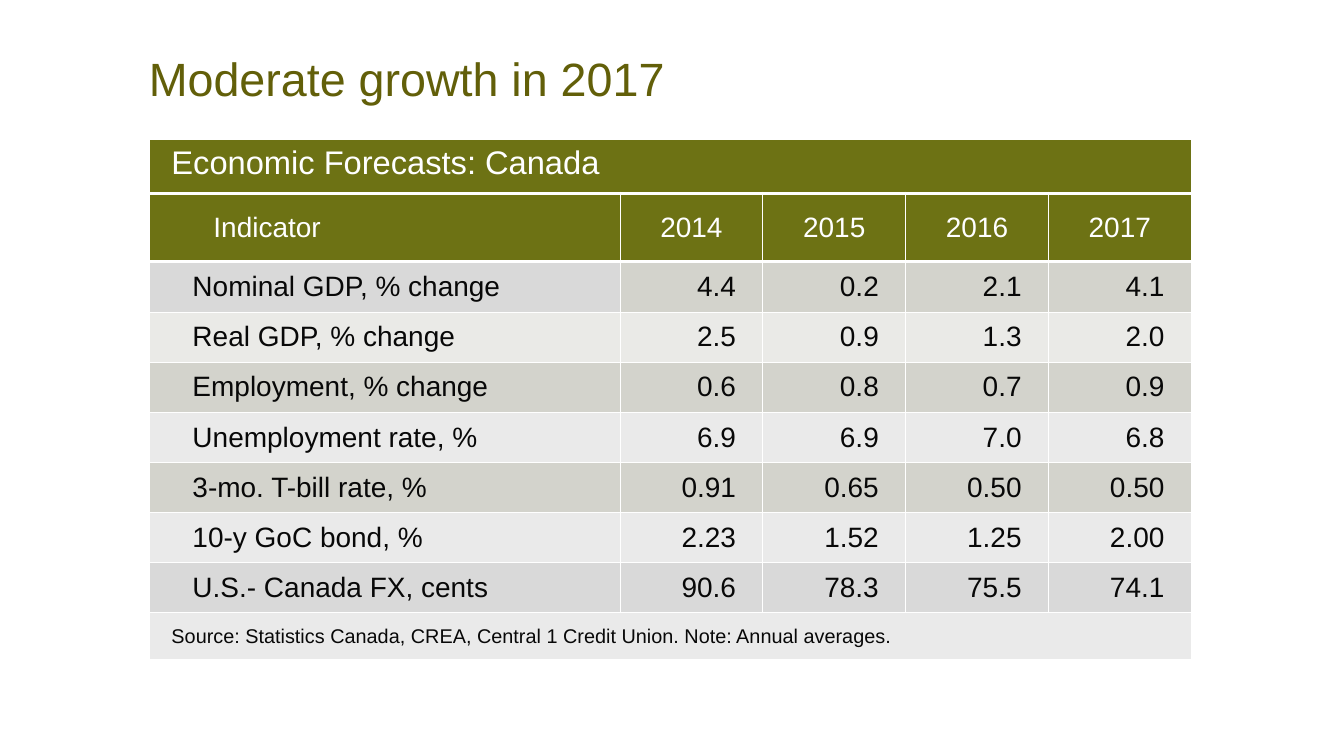
from lxml import etree
from pptx import Presentation
from pptx.dml.color import RGBColor
from pptx.enum import text
from pptx.oxml import ns
from pptx.util import Pt

OLIVE = RGBColor(0x6D, 0x72, 0x14)
TITLE_OLIVE = RGBColor(0x62, 0x5F, 0x09)
WHITE = RGBColor(0xFF, 0xFF, 0xFF)
INK = RGBColor(0x08, 0x08, 0x08)
GREY = RGBColor(0xD9, 0xD9, 0xD9)
STONE = RGBColor(0xD3, 0xD3, 0xCC)
PALE_STONE = RGBColor(0xEA, 0xEA, 0xE7)
PALE_GREY = RGBColor(0xEA, 0xEA, 0xEA)
LEFT, CENTER, RIGHT = text.PP_ALIGN.LEFT, text.PP_ALIGN.CENTER, text.PP_ALIGN.RIGHT

YEARS = ["2014", "2015", "2016", "2017"]
# Indicator, yearly values, label fill, value fill
FORECASTS = [
    ("Nominal GDP, % change", ["4.4", "0.2", "2.1", "4.1"], GREY, STONE),
    ("Real GDP, % change", ["2.5", "0.9", "1.3", "2.0"], PALE_STONE, PALE_STONE),
    ("Employment, % change", ["0.6", "0.8", "0.7", "0.9"], STONE, STONE),
    ("Unemployment rate, %", ["6.9", "6.9", "7.0", "6.8"], PALE_GREY, PALE_GREY),
    ("3-mo. T-bill rate, %", ["0.91", "0.65", "0.50", "0.50"], STONE, STONE),
    ("10-y GoC bond, %", ["2.23", "1.52", "1.25", "2.00"], PALE_GREY, PALE_GREY),
    ("U.S.- Canada FX, cents", ["90.6", "78.3", "75.5", "74.1"], GREY, GREY),
]
COLUMN_WIDTHS = [403] + [122.4] * len(YEARS)
ROW_HEIGHTS = [46, 59] + [43] * len(FORECASTS) + [40]
SOURCE_ROW = len(ROW_HEIGHTS) - 1


def set_borders(cell, top, bottom):
    """Draw white borders; widths in points."""
    properties = cell._tc.get_or_add_tcPr()
    for side, width in (("L", 1), ("R", 1), ("T", top), ("B", bottom)):
        line = etree.SubElement(properties, ns.qn("a:ln" + side), w=str(Pt(width)))
        fill = etree.SubElement(line, ns.qn("a:solidFill"))
        etree.SubElement(fill, ns.qn("a:srgbClr"), val=str(WHITE))


def fill_cell(row, column, wording, fill, color=INK, size=24, align=LEFT,
              margins=(18.5, 5, 18.5, 5), anchor=text.MSO_ANCHOR.MIDDLE):
    cell = table.cell(row, column)
    cell.fill.solid()
    cell.fill.fore_color.rgb = fill
    cell.vertical_anchor = anchor
    (cell.margin_left, cell.margin_top,
     cell.margin_right, cell.margin_bottom) = map(Pt, margins)
    paragraph = cell.text_frame.paragraphs[0]
    paragraph.text = wording
    paragraph.alignment = align
    paragraph.font.name = "Arial"
    paragraph.font.size = Pt(size)
    paragraph.font.bold = False
    paragraph.font.color.rgb = color
    return paragraph


prs = Presentation()
prs.slide_width, prs.slide_height = Pt(1152), Pt(648)
slide = prs.slides.add_slide(prs.slide_layouts[5])

# Title
title = slide.shapes.title
title.left, title.top, title.width, title.height = Pt(117.5), Pt(37.5), Pt(1021.5), Pt(59)
frame = title.text_frame
frame.margin_left = frame.margin_right = Pt(10)
frame.margin_top = frame.margin_bottom = Pt(5)
frame.vertical_anchor = text.MSO_ANCHOR.TOP
frame.word_wrap = True
heading = frame.paragraphs[0]
heading.text = "Moderate growth in 2017"
heading.alignment = LEFT
heading.font.name = "Arial"
heading.font.size = Pt(40)
heading.font.color.rgb = TITLE_OLIVE

# Table grid
table = slide.shapes.add_table(
    len(ROW_HEIGHTS), len(COLUMN_WIDTHS), Pt(128.5), Pt(119.5),
    Pt(sum(COLUMN_WIDTHS)), Pt(sum(ROW_HEIGHTS))).table
for column, width in zip(table.columns, COLUMN_WIDTHS):
    column.width = Pt(width)
for index, height in enumerate(ROW_HEIGHTS):
    table.rows[index].height = Pt(height)
    for cell in table.rows[index].cells:
        set_borders(cell, 3 if index in (1, 2) else 1, 3 if index in (0, 1) else 1)
for row in (0, SOURCE_ROW):
    table.cell(row, 0).merge(table.cell(row, len(YEARS)))

# Heading rows
fill_cell(0, 0, "Economic Forecasts: Canada", OLIVE, WHITE, 28,
          anchor=text.MSO_ANCHOR.TOP)
indicator = fill_cell(1, 0, "Indicator", OLIVE, WHITE)
indicator._p.get_or_add_pPr().set("marL", str(Pt(36)))
for column, year in enumerate(YEARS, 1):
    fill_cell(1, column, year, OLIVE, WHITE, align=CENTER)

# Forecast rows
for row, (label, values, label_fill, value_fill) in enumerate(FORECASTS, 2):
    fill_cell(row, 0, label, label_fill, margins=(36.5, 5, 18.5, 5))
    for column, value in enumerate(values, 1):
        fill_cell(row, column, value, value_fill, align=RIGHT, margins=(0, 0, 23, 0))

# Source row
fill_cell(SOURCE_ROW, 0,
          "Source: Statistics Canada, CREA, Central 1 Credit Union. Note: Annual averages.",
          PALE_GREY, size=17)

prs.save("out.pptx")
